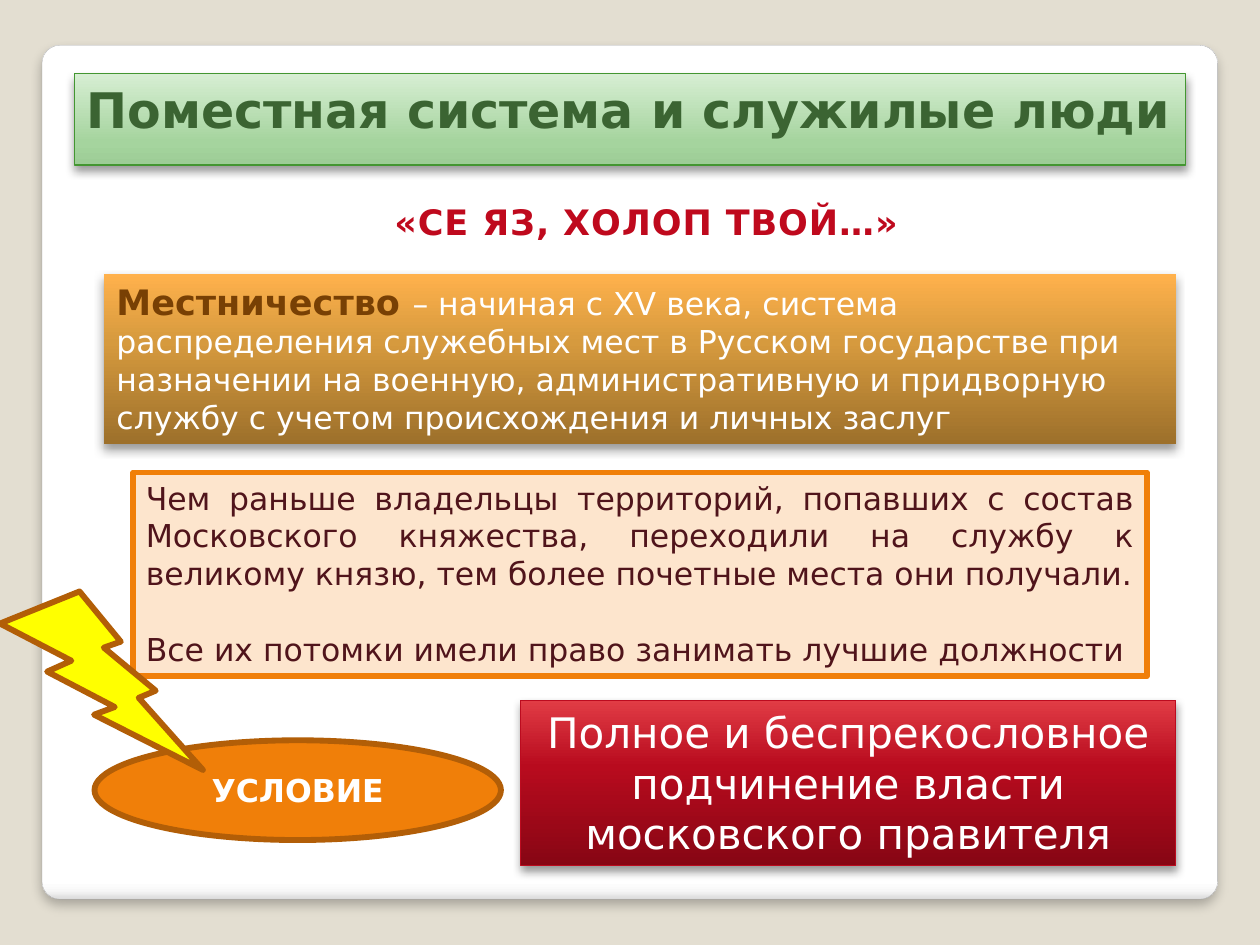
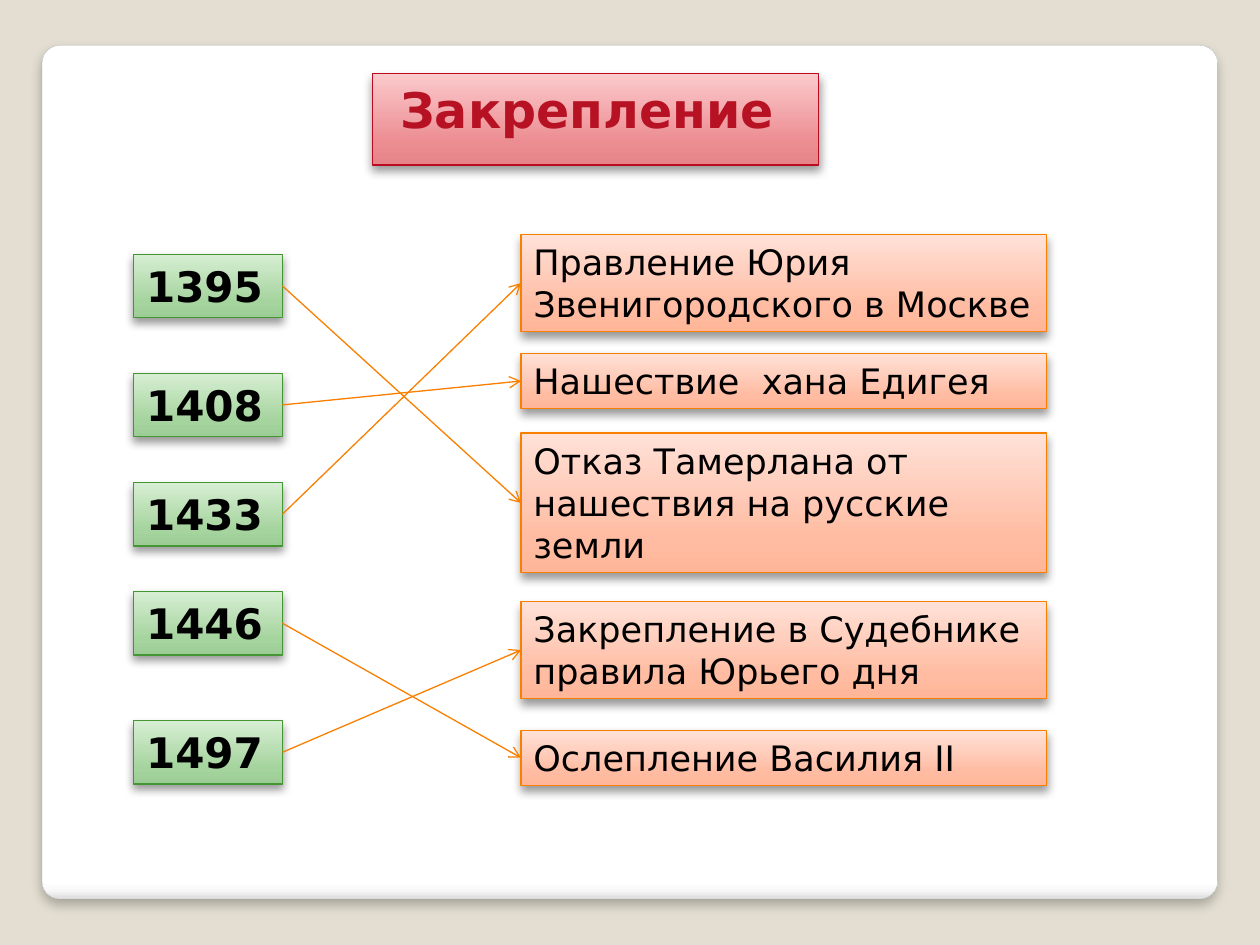
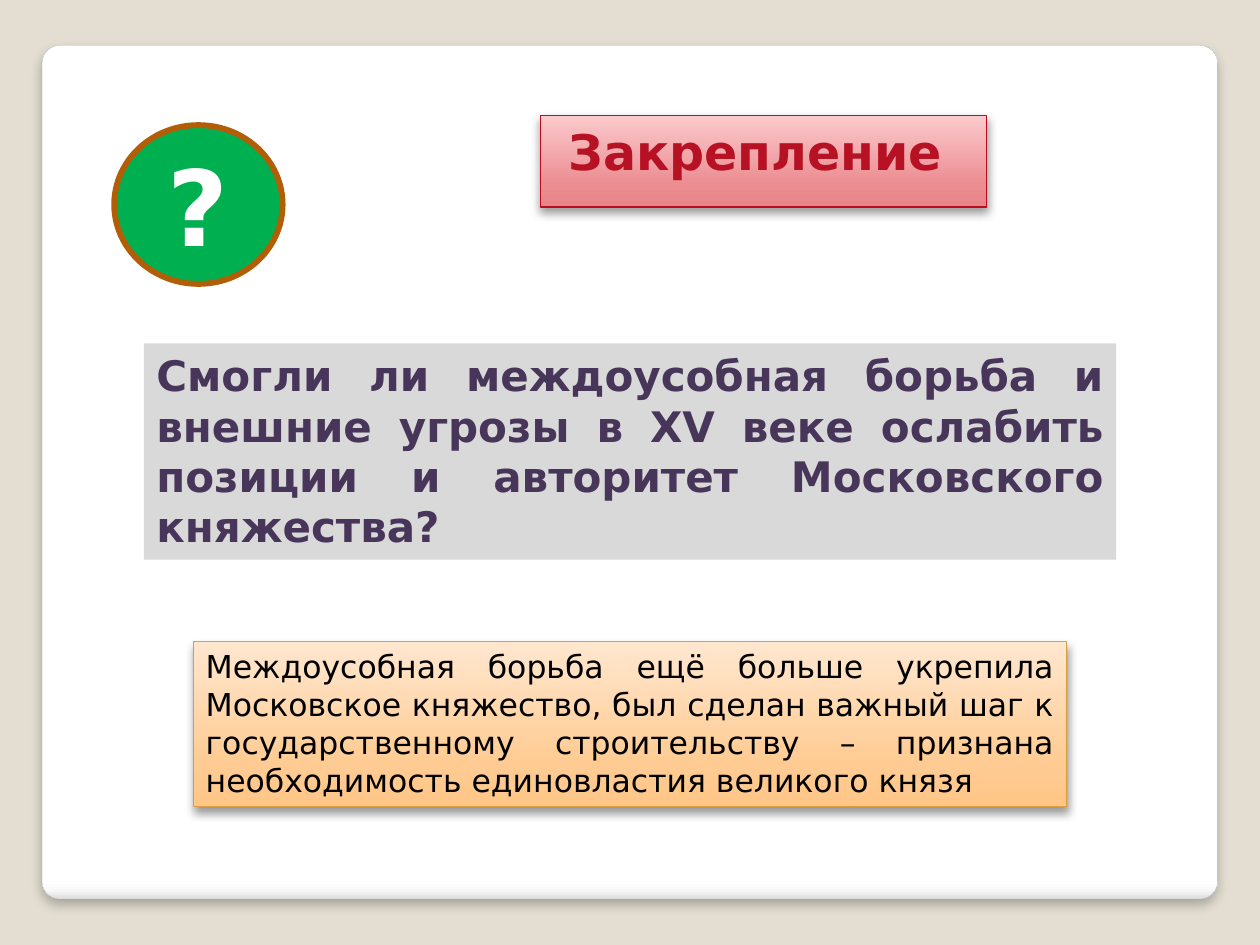
from lxml.etree import SubElement
from pptx import Presentation
from pptx.dml.color import RGBColor
from pptx.enum.shapes import MSO_CONNECTOR, MSO_SHAPE
from pptx.enum.text import MSO_ANCHOR, PP_ALIGN
from pptx.oxml.ns import qn
from pptx.util import Pt

FONT = "DejaVu Sans"
color = RGBColor.from_string

BROWN = "B25E07"
ORANGE = "F07F09"
ARROW_ORANGE = "F97F00"
RED = "BC0B1F"
WHITE = "FFFFFF"
BLACK = "000000"

# Gradients run from the bottom edge up: (percent, colour)
PANEL_GRADIENT = [(0, "DADADA"), (1, "F7F7F7"), (2, WHITE), (100, WHITE)]
GREEN_GRADIENT = [(0, "9DCD96"), (25, "A5D49E"), (100, "D7EED3")]
PINK_GRADIENT = [(0, "E68589"), (25, "EC8D92"), (100, "FBCACC")]
PEACH_GRADIENT = [(0, "FFB598"), (25, "FFBCA2"), (100, "FFE1D8")]
CREAM_GRADIENT = [(0, "FFC687"), (25, "FFCB92"), (100, "FFE7CF")]
AMBER_GRADIENT = [(0, "9D702B"), (60, "D69A3E"), (100, "FFB14C")]
RED_GRADIENT = [(0, "870614"), (60, "B80B1E"), (100, "E13C45")]

BOX_SHADOW = (40, 5.2, 3)
PANEL_SHADOW = (25, 6, 4)


def draw_shape(slide, kind, left, top, width, height, fill,
               line=None, line_width=0.75, shadow=None):
    """Fill is a hex colour or gradient stops; shadow is (opacity %, blur, distance)."""
    shape = slide.shapes.add_shape(kind, Pt(left), Pt(top), Pt(width), Pt(height))
    if isinstance(fill, str):
        shape.fill.solid()
        shape.fill.fore_color.rgb = color(fill)
    else:
        shape.fill.gradient()
        shape.fill.gradient_angle = 90
        stops = shape._element.spPr.find(".//" + qn("a:gsLst"))
        stops.clear()
        for percent, stop_color in fill:
            stop = SubElement(stops, qn("a:gs"), pos=str(percent * 1000))
            SubElement(stop, qn("a:srgbClr"), val=stop_color)
    if line:
        shape.line.color.rgb = color(line)
        shape.line.width = Pt(line_width)
    else:
        shape.line.fill.background()
    shape.shadow.inherit = False
    if shadow:
        opacity, blur, distance = shadow
        effects = shape._element.spPr.find(qn("a:effectLst"))
        outer = SubElement(effects, qn("a:outerShdw"), blurRad=str(Pt(blur)),
                           dist=str(Pt(distance)), dir="5400000",
                           algn="ctr", rotWithShape="0")
        shade = SubElement(outer, qn("a:srgbClr"), val=BLACK)
        SubElement(shade, qn("a:alpha"), val=str(opacity * 1000))
    return shape


def write_text(shape, text, size, text_color, bold=False,
               align=PP_ALIGN.LEFT, anchor=MSO_ANCHOR.TOP, wrap=True):
    frame = shape.text_frame
    frame.text = text
    frame.word_wrap = wrap
    frame.vertical_anchor = anchor
    for paragraph in frame.paragraphs:
        paragraph.alignment = align
        for run in paragraph.runs:
            run.font.name = FONT
            run.font.size = Pt(size)
            run.font.bold = bold
            run.font.color.rgb = color(text_color)


presentation = Presentation()
presentation.slide_width, presentation.slide_height = Pt(720), Pt(540)
background = presentation.slide_master.background.fill
background.solid()
background.fore_color.rgb = color("E3DED1")

slides = []
for number in range(3):
    slide = presentation.slides.add_slide(presentation.slide_layouts[6])
    panel = draw_shape(slide, MSO_SHAPE.ROUNDED_RECTANGLE, 24, 25.9, 671.8, 488,
                       PANEL_GRADIENT, "A4A4A4", 0.16, PANEL_SHADOW)
    panel.adjustments[0] = 0.021
    slides.append(slide)
service_slide, matching_slide, question_slide = slides

# Title bands
for slide, left, top, width, fill, line, text, text_color, align in [
    (service_slide, 42.5, 42, 635, GREEN_GRADIENT, "439631",
     "Поместная система и служилые люди", "3B6432", PP_ALIGN.LEFT),
    (matching_slide, 212.75, 42, 255, PINK_GRADIENT, RED,
     "Закрепление ", "B71124", PP_ALIGN.CENTER),
    (question_slide, 308.9, 66, 255, PINK_GRADIENT, RED,
     "Закрепление ", "B71124", PP_ALIGN.CENTER),
]:
    title = draw_shape(slide, MSO_SHAPE.RECTANGLE, left, top, width, 52.25,
                       fill, line, shadow=BOX_SHADOW)
    write_text(title, text, 28, text_color, True, align)

# Slide 1: service people
definition = draw_shape(service_slide, MSO_SHAPE.RECTANGLE, 59.5, 156.6, 612.5, 97,
                        AMBER_GRADIENT, shadow=BOX_SHADOW)
write_text(definition, "Местничество ", 20, "784004", True)
meaning = definition.text_frame.paragraphs[0].add_run()
meaning.text = ("– начиная с XV века, система распределения служебных мест "
                "в Русском государстве при назначении на военную, административную "
                "и придворную службу с учетом происхождения и личных заслуг")
meaning.font.name = FONT
meaning.font.size = Pt(18)
meaning.font.bold = False
meaning.font.color.rgb = color(WHITE)

privilege = draw_shape(service_slide, MSO_SHAPE.RECTANGLE, 76.25, 270, 579, 116.5,
                       "FDE5CD", ORANGE, 3.35)
write_text(privilege,
           "Чем раньше владельцы территорий, попавших с состав Московского княжества, "
           "переходили на службу к великому князю, тем более почетные места они получали.\n"
           "Все их потомки имели право занимать лучшие должности",
           18, "50141B", align=PP_ALIGN.JUSTIFY)
privilege.text_frame.paragraphs[1].space_before = Pt(21.5)

condition = draw_shape(service_slide, MSO_SHAPE.OVAL, 54, 423, 232.25, 57,
                       ORANGE, BROWN, 3.35)
write_text(condition, "УСЛОВИЕ", 18, WHITE, True, PP_ALIGN.CENTER, MSO_ANCHOR.MIDDLE)
draw_shape(service_slide, MSO_SHAPE.LIGHTNING_BOLT, 0, 338, 116, 102,
           "FFFF00", BROWN, 3.35)

obedience = draw_shape(service_slide, MSO_SHAPE.RECTANGLE, 297.6, 400.25, 374.25, 94.5,
                       RED_GRADIENT, RED, shadow=BOX_SHADOW)
write_text(obedience, "Полное и беспрекословное подчинение власти московского правителя",
           24, WHITE, align=PP_ALIGN.CENTER)

quote = service_slide.shapes.add_textbox(Pt(218.25), Pt(111.25), Pt(314), Pt(31.5))
write_text(quote, "«СЕ ЯЗ, ХОЛОП ТВОЙ…»", 20, "BF091D", True, wrap=False)
quote.text_frame.paragraphs[0].runs[0].font._element.set("spc", "50")

# Slide 2: years matched with events
year_boxes = []
for year, top in [("1395", 145.25), ("1408", 213.25), ("1433", 275.75),
                  ("1446", 338), ("1497", 411.75)]:
    box = draw_shape(matching_slide, MSO_SHAPE.RECTANGLE, 76.4, top, 85, 36.25,
                     GREEN_GRADIENT, "439631", shadow=BOX_SHADOW)
    write_text(box, year, 24, BLACK, True)
    year_boxes.append(box)

event_boxes = []
for event, top, height in [
    ("Правление Юрия Звенигородского в Москве", 134, 55.5),
    ("Нашествие  хана Едигея", 202, 31.5),
    ("Отказ Тамерлана от нашествия на русские земли", 247.4, 80),
    ("Закрепление в Судебнике правила Юрьего дня", 343.75, 55.5),
    ("Ослепление Василия II", 417.25, 31.5),
]:
    box = draw_shape(matching_slide, MSO_SHAPE.RECTANGLE, 297.7, top, 300.5, height,
                     PEACH_GRADIENT, ARROW_ORANGE, shadow=BOX_SHADOW)
    write_text(box, event, 20, BLACK)
    event_boxes.append(box)

RIGHT_SITE, LEFT_SITE = 3, 1
for year_box, event_index in zip(year_boxes, [2, 1, 0, 4, 3]):
    arrow = matching_slide.shapes.add_connector(MSO_CONNECTOR.STRAIGHT, 0, 0, 0, 0)
    arrow.begin_connect(year_box, RIGHT_SITE)
    arrow.end_connect(event_boxes[event_index], LEFT_SITE)
    arrow.line.color.rgb = color(ARROW_ORANGE)
    arrow.line.width = Pt(0.75)
    SubElement(arrow.line._get_or_add_ln(), qn("a:tailEnd"), type="arrow")
    SubElement(arrow._element.spPr, qn("a:effectLst"))

# Slide 3: closing question
question = draw_shape(question_slide, MSO_SHAPE.RECTANGLE, 82.25, 196.25, 555.5, 123.5,
                      "D9D9D9")
write_text(question,
           "Смогли ли междоусобная борьба и внешние угрозы в XV веке ослабить "
           "позиции и авторитет Московского княжества?",
           24, "48365A", True, PP_ALIGN.JUSTIFY)

question_mark = draw_shape(question_slide, MSO_SHAPE.OVAL, 65.25, 71.5, 96.25, 90.75,
                           "00B050", BROWN, 3.35)
write_text(question_mark, "?", 60, WHITE, True, PP_ALIGN.CENTER, MSO_ANCHOR.MIDDLE)

answer = draw_shape(question_slide, MSO_SHAPE.RECTANGLE, 110.5, 366.4, 499, 94.5,
                    CREAM_GRADIENT, "DB9E3F", shadow=BOX_SHADOW)
write_text(answer,
           "Междоусобная борьба ещё больше укрепила Московское княжество, был сделан "
           "важный шаг к государственному строительству – признана необходимость "
           "единовластия великого князя",
           18, BLACK, align=PP_ALIGN.JUSTIFY)

presentation.save("out.pptx")
